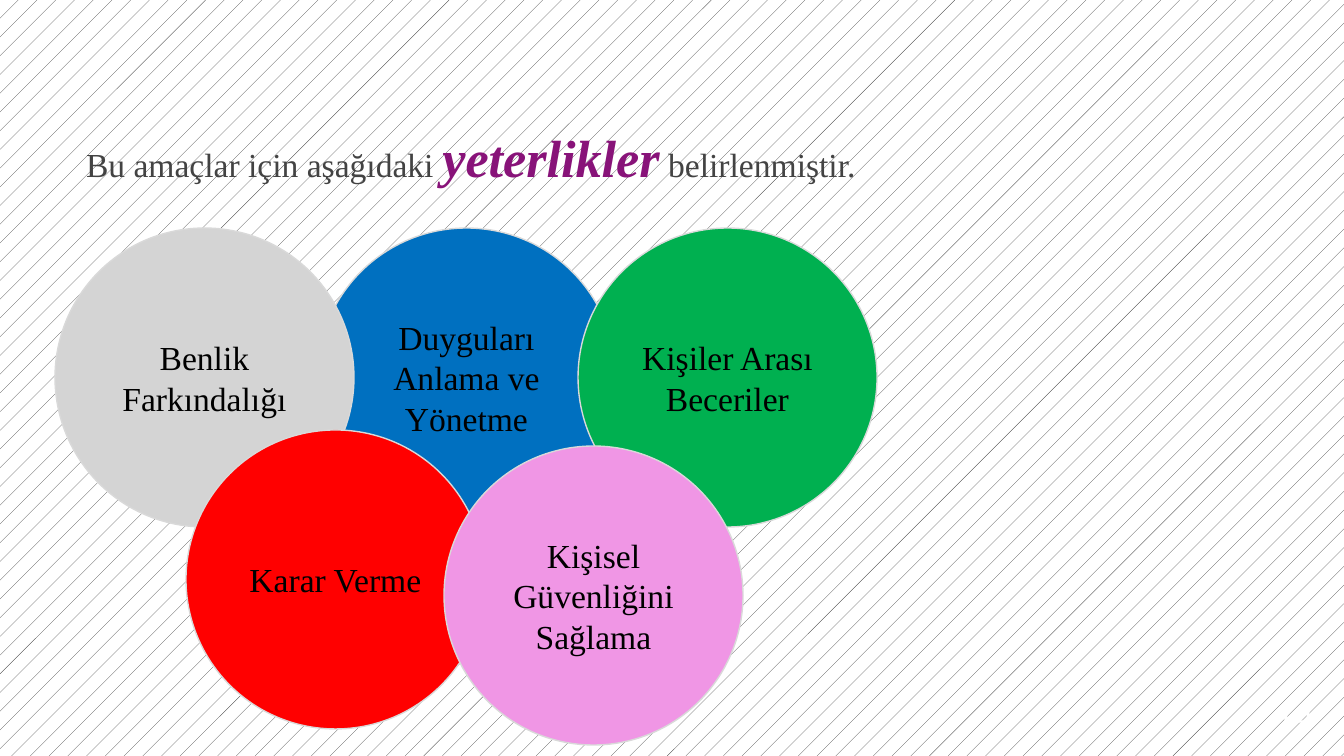
"""Build a slide with five overlapping competency circles under a heading."""
from pptx import Presentation
from pptx.dml.color import RGBColor
from pptx.enum.dml import MSO_PATTERN
from pptx.enum.shapes import MSO_SHAPE
from pptx.enum.text import MSO_ANCHOR as Anchor, PP_ALIGN as Align
from pptx.util import Emu, Pt

SCALE = 9144000 / 1344
SERIF = "Times New Roman"
COLORS = {
    "dark": "434343", "white": "FFFFFF", "black": "000000", "purple": "881379",
    "outline": "D9D9D9", "gray": "D4D4D4", "blue": "0070C0",
    "green": "00B050", "red": "FF0000", "pink": "F096E5",
}


def px(*lengths):
    return [Emu(round(length * SCALE)) for length in lengths]


def write(shape, anchor, align, runs):
    frame = shape.text_frame
    frame.word_wrap = True
    frame.vertical_anchor = anchor
    frame.margin_left, frame.margin_top, frame.margin_right, frame.margin_bottom = px(13, 13, 13, 13)
    paragraph = frame.paragraphs[0]
    paragraph.alignment = align
    for text, size, font, color, emphasis in runs:
        run = paragraph.add_run()
        run.text = text
        run.font.size = Pt(size)
        run.font.name = font
        run.font.bold = run.font.italic = emphasis
        run.font.color.rgb = RGBColor.from_string(COLORS[color])


presentation = Presentation()
presentation.slide_width, presentation.slide_height = px(1344, 756)
slide = presentation.slides.add_slide(presentation.slide_layouts[6])

background = slide.background.fill
background.patterned()
background.pattern = MSO_PATTERN.PERCENT_5
background.fore_color.rgb = RGBColor.from_string(COLORS["dark"])
background.back_color.rgb = RGBColor.from_string(COLORS["white"])

heading = slide.shapes.add_textbox(*px(73, 75, 1025, 126))
write(heading, Anchor.BOTTOM, Align.LEFT, [
    ("Bu amaçlar için aşağıdaki ", 18, SERIF, "dark", False),
    ("yeterlikler", 28, SERIF, "purple", True),
    (" ", 18, SERIF, "dark", True),
    ("belirlenmiştir.", 18, SERIF, "dark", False),
])

page_number = slide.shapes.add_textbox(*px(1246, 687, 81, 58))
write(page_number, Anchor.MIDDLE, Align.RIGHT, [("14", 18, "Lato", "white", False)])

DIAMETER = 299
competencies = [
    ("Duyguları Anlama ve Yönetme", "blue", 317, 228),
    ("Benlik Farkındalığı", "gray", 55, 228),
    ("Kişiler Arası Beceriler", "green", 578, 228),
    ("Karar Verme", "red", 186, 430),
    ("Kişisel Güvenliğini Sağlama", "pink", 444, 446),
]
for label, color, left, top in competencies:
    circle = slide.shapes.add_shape(MSO_SHAPE.OVAL, *px(left, top, DIAMETER, DIAMETER))
    circle.shadow.inherit = False
    circle.fill.solid()
    circle.fill.fore_color.rgb = RGBColor.from_string(COLORS[color])
    circle.line.color.rgb = RGBColor.from_string(COLORS["outline"])
    circle.line.width = Pt(0.75)
    write(circle, Anchor.MIDDLE, Align.CENTER, [(label, 18, SERIF, "black", False)])

presentation.save("out.pptx")
